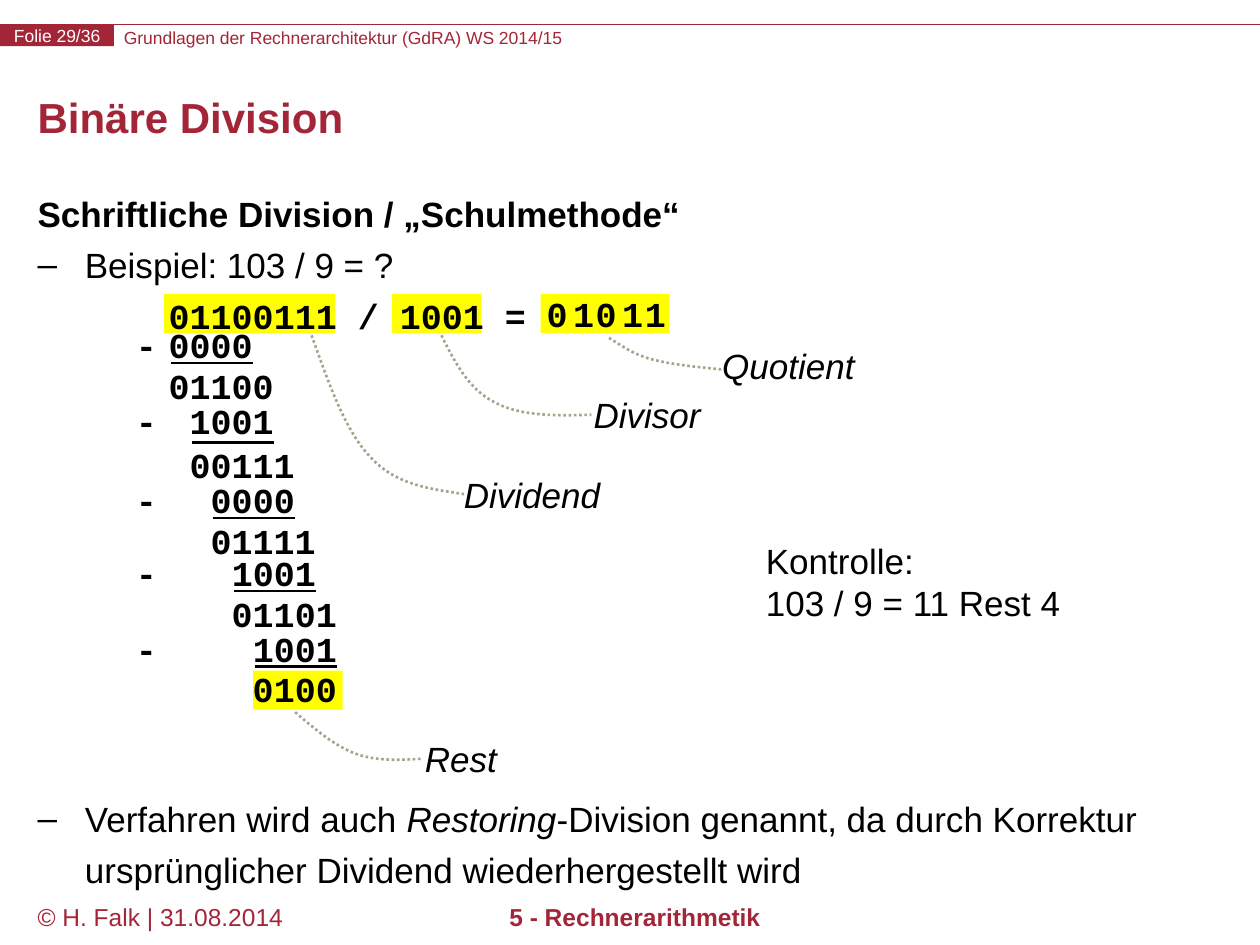
from lxml import etree
from pptx import Presentation
from pptx.dml.color import RGBColor
from pptx.enum.dml import MSO_LINE
from pptx.enum.shapes import MSO_CONNECTOR, MSO_SHAPE
from pptx.enum.text import MSO_ANCHOR, PP_ALIGN
from pptx.oxml.ns import qn
from pptx.util import Inches, Pt

RECT = MSO_SHAPE.RECTANGLE
LINE = MSO_CONNECTOR.STRAIGHT
DOTS = MSO_LINE.ROUND_DOT
LEFT, MID = PP_ALIGN.LEFT, PP_ALIGN.CENTER
TOP, CORE = MSO_ANCHOR.TOP, MSO_ANCHOR.MIDDLE
SANS, MONO = "Arial", "Courier New"
HUES = {"red": "A32638", "ink": "000000", "mark": "FFFF00",
        "paper": "FFFFFF", "curve": "AAA28D"}

deck = Presentation()
deck.slide_width, deck.slide_height = Inches(10), Inches(7.5)
COL, ROW = deck.slide_width / 100, deck.slide_height / 75
slide = deck.slides.add_slide(deck.slide_layouts[6])
shapes = slide.shapes


def grid(x, y, w, h):
    return int(x * COL), int(y * ROW), int(w * COL), int(h * ROW)


def hue(name):
    return RGBColor.from_string(HUES[name])


def style(para, runs, size=20, font=SANS, color="ink", bold=False, align=LEFT):
    para.alignment = align
    for words, slant in runs:
        run = para.add_run()
        run.text = words
        face = run.font
        face.size, face.name, face.bold, face.italic = Pt(size), font, bold, slant
        face.color.rgb = hue(color)


def write(text, box, shape=None, wrap=False, inset=True, anchor=TOP,
          slant=False, lead=None, **form):
    shape = shape or shapes.add_textbox(*grid(*box))
    frame = shape.text_frame
    frame.word_wrap, frame.vertical_anchor = wrap, anchor
    if not inset:
        frame.margin_left = frame.margin_right = 0
        frame.margin_top = frame.margin_bottom = 0
    for i, words in enumerate(text.split("\n")):
        para = frame.add_paragraph() if i else frame.paragraphs[0]
        if lead:
            para.line_spacing = lead
        style(para, [(words, slant)], **form)


def block(box, color):
    shape = shapes.add_shape(RECT, *grid(*box))
    shape.shadow.inherit = False
    shape.fill.solid()
    shape.fill.fore_color.rgb = hue(color)
    shape.line.fill.background()
    return shape


def rule(x, y, w, color, width):
    left, top, span, _ = grid(x, y, w, 0)
    line = shapes.add_connector(LINE, left, top, left + span, top)
    line.line.color.rgb, line.line.width = hue(color), Pt(width)
    etree.SubElement(line._element.spPr, qn("a:effectLst"))


def bend(points):
    dots = [grid(x, y, 0, 0)[:2] for x, y in points]
    build = shapes.build_freeform(*dots[0])
    build.add_line_segments(dots[1:], close=False)
    curve = build.convert_to_shape()
    curve.shadow.inherit = False
    curve.fill.background()
    curve.line.color.rgb, curve.line.width = hue("curve"), Pt(1.5)
    curve.line.dash_style = DOTS
    legs = list(curve._element.iter(qn("a:lnTo")))
    for k in range(0, len(legs), 3):
        arc = etree.SubElement(legs[k].getparent(), qn("a:cubicBezTo"))
        for leg in legs[k:k + 3]:
            arc.append(leg[0])
            leg.getparent().remove(leg)


def header(x, y, w, h):
    rule(x, y, w, "red", 0.75)
    write("Grundlagen der Rechnerarchitektur (GdRA) WS 2014/15",
          (x + 9.83, y + 0.18, 66, h), inset=False, size=10, color="red")
    tag = (x, y, 9.05, h)
    write("Folie 29/36", tag, block(tag, "red"), inset=False, anchor=CORE,
          size=10, color="paper", align=MID)


def footer(x, y, w, h):
    write("© H. Falk | 31.08.2014", (x, y, 22, h), wrap=True, size=14, color="red")
    write("5 - Rechnerarithmetik", (x + 18.1, y, w, h), wrap=True, size=14,
          color="red", bold=True, align=MID)


def body(x, y, w, h):
    frame = shapes.add_textbox(*grid(x, y, w, h)).text_frame
    frame.word_wrap = True
    dash = int(3.75 * COL)
    rows = [
        ([("Schriftliche Division / „Schulmethode“", False)], 0.9, 0, 0, False,
         {"bold": True}),
        ([("Beispiel: 103 / 9 = ?", False)], 1.2, dash, 0, True, {}),
        ([("01100111 / 1001 =", False)], 1.2, int(10.4 * COL), 0, False,
         {"font": MONO, "bold": True}),
        ([("Verfahren wird auch ", False), ("Restoring", True),
          ("-Division genannt, da durch Korrektur ursprünglicher Dividend "
           "wiederhergestellt wird", False)], 1.2, dash, 259, True, {}),
    ]
    for i, (runs, lead, left, gap, mark, form) in enumerate(rows):
        para = frame.add_paragraph() if i else frame.paragraphs[0]
        para.line_spacing, para.space_before = lead, Pt(gap)
        style(para, runs, **form)
        props = para._p.get_or_add_pPr()
        props.set("marL", str(left))
        if mark:
            props.set("indent", str(-dash))
            etree.SubElement(props, qn("a:buFont"), typeface=SANS)
            etree.SubElement(props, qn("a:buChar"), char="–")


def marks(x, y, h):
    for dx, dy, w in [(0, 0, 13.6), (18.1, 0, 7.1), (29.9, 0, 10.2), (7.1, 29.9, 7.1)]:
        block((x + dx, y + dy, w, h), "mark")


def steps(x, y, h):
    code = {"font": MONO, "bold": True}
    rows = [(0, "0000", "01100", 0, "0", 0), (6, "1001", "00111", 0.3, "1", 2.1),
            (12.3, "0000", "01111", 0, "0", 3.9), (18.1, "1001", "01101", 0, "1", 6),
            (24.1, "1001", "0100", 0, "1", 7.8)]
    for i, (dy, take, rest, drop, digit, dx) in enumerate(rows):
        left, top = x + 2.6 + i * 1.67, y + dy
        write("-", (x, top, 3.7, h), **code)
        write(take, (left, top, 8.8, h), **code)
        rule(left + 1.15, top + 3.6 + drop, 6.5, "ink", 1.5)
        write(rest, (left, top + 3.2 + drop, 2.1 + 1.67 * len(rest), h), **code)
        write(digit, (x + 32.6 + dx, y - 2.5, 3.7, h), **code)


def labels(x, y, h):
    names = [("Quotient", 20.5, 0, 12.6), ("Divisor", 10.3, 3.95, 10.6),
             ("Dividend", 0, 10.3, 13), ("Rest", -3.1, 31.2, 7.8)]
    for name, dx, dy, w in names:
        write(name, (x + dx, y + dy, w, h), slant=True)
    curves = [
        [(12.5, 0), (13.5, .6), (14.4, 1.3), (15.9, 1.7), (17.4, 2.1), (19.4, 2.3), (21.4, 2.5)],
        [(-.8, -.2), (.3, 2), (1.4, 4.1), (3.4, 5.1), (5.4, 6.2), (8.2, 6.2), (11.1, 6.1)],
        [(-11.1, -.2), (-9.7, 3.7), (-8.4, 7.5), (-6.3, 9.6), (-4.3, 11.7), (-1.6, 12), (1, 12.4)],
        [(-12.4, 29.7), (-10.8, 31.1), (-9.2, 32.4), (-7.6, 33), (-5.9, 33.6), (-4.2, 33.5), (-2.4, 33.4)],
    ]
    for curve in curves:
        bend([(x + dx, y + dy) for dx, dy in curve])


header(0, 1.97, 100, 1.7)
marks(13, 23.33, 3.1)
footer(2, 71.1, 60.6, 3.9)
write("Binäre Division", (2, 6, 96.1, 7.2), wrap=True, anchor=CORE, lead=Pt(24),
      size=24, color="red", bold=True)
body(2, 15.2, 96.1, 54.6)
steps(9.8, 25.22, 4.4)
labels(35.83, 26.82, 4.4)
write("Kontrolle:\n103 / 9 = 11 Rest 4", (59.8, 42.35, 25.5, 7.7))
deck.save("out.pptx")
